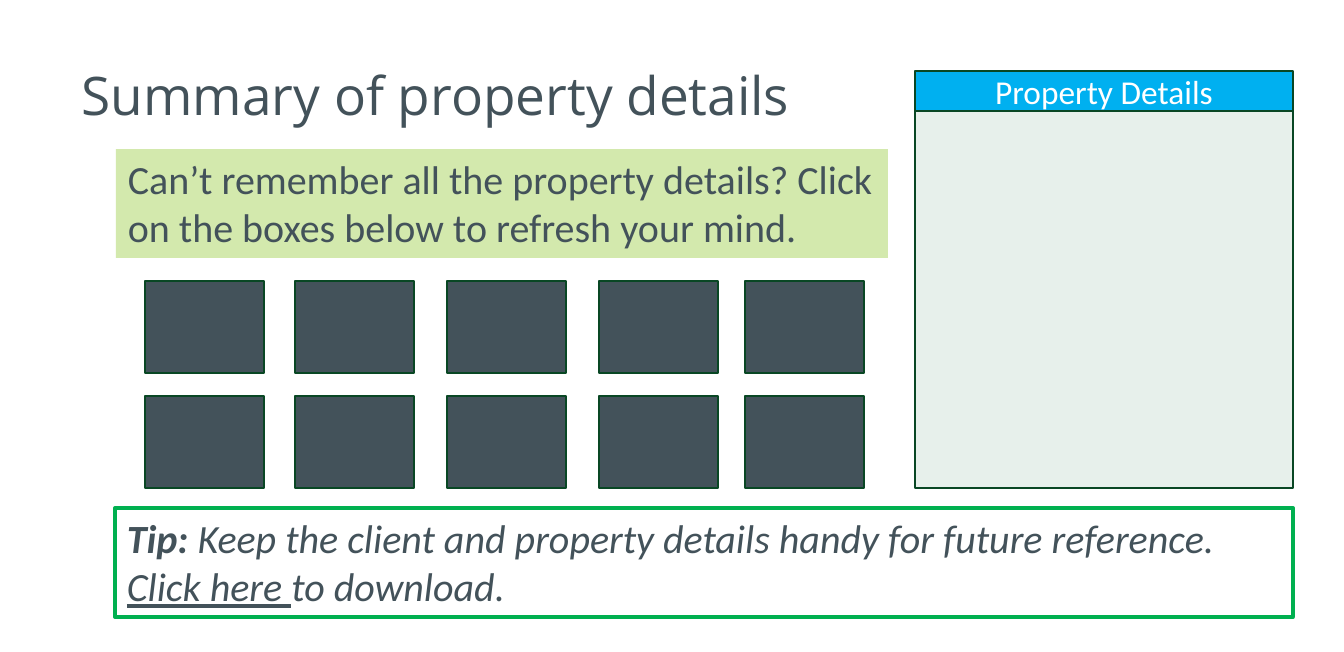
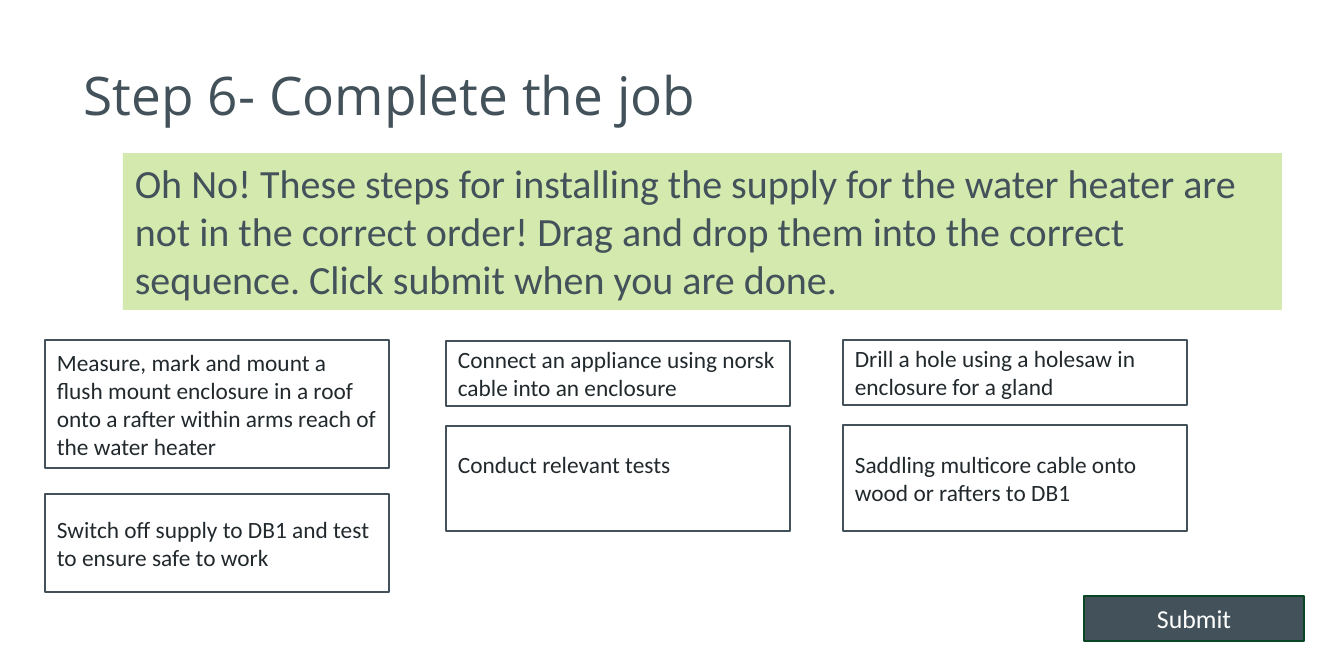
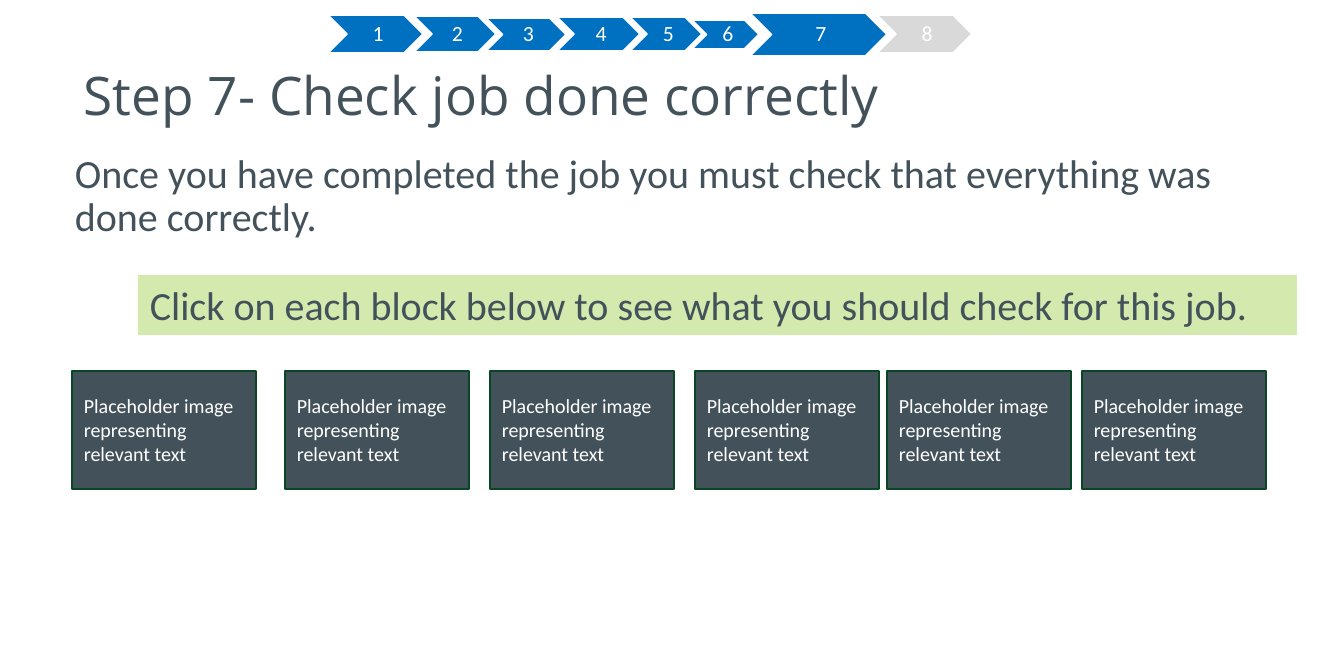
"""Build three training slides: property summary, step ordering and job check."""
from itertools import product

from pptx import Presentation
from pptx.dml.color import RGBColor
from pptx.enum.shapes import MSO_SHAPE as SHAPE
from pptx.enum.text import MSO_ANCHOR as ANCHOR, PP_ALIGN as ALIGN
from pptx.util import Pt

PX = 914400 // 120
PAGE_SIZE = (1344, 652)

SLATE, INK, WHITE = "43525A", "22292D", "FFFFFF"
FOREST, GREEN, LIME, MINT = "094724", "00B050", "D3E9AD", "E7F0EB"
SKY, BLUE, GREY = "00B0F0", "0070C0", "D9D9D9"

TITLE = {"text": SLATE, "font": "Open Sans", "size": 31.9, "spacing": 0.9, "anchor": ANCHOR.MIDDLE}
BODY = {"text": SLATE, "size": 24, "spacing": 0.9, "anchor": ANCHOR.TOP}
BANNER = {"fill": LIME, "text": SLATE, "size": 24, "anchor": ANCHOR.TOP}
TIP = {**BANNER, "fill": None, "line": GREEN, "weight": 2.25}
PANEL = {"fill": MINT, "line": FOREST}
PANEL_HEAD = {"fill": SKY, "line": FOREST, "size": 20, "align": ALIGN.CENTER}
TILE = {"fill": SLATE, "line": FOREST, "size": 12}
BUTTON = {**TILE, "size": 15.5, "align": ALIGN.CENTER}
CARD = {"fill": WHITE, "line": SLATE, "text": INK, "size": 14}
CHEVRON = {"shape": SHAPE.CHEVRON, "fill": BLUE, "line": WHITE, "size": 13, "spacing": 0.9,
           "align": ALIGN.CENTER, "insets": (7, 2, 2, 2)}

SUMMARY_TITLE = "Summary of property details"
SUMMARY_BANNER = "Can’t remember all the property details? Click on the boxes below to refresh your mind."
TIP_SPANS = [
    ("Tip: ", {"bold": True, "italic": True}),
    ("Keep the client and property details handy for future reference. ", {"italic": True}),
    ("Click here ", {"italic": True, "underline": True}),
    ("to download.", {"italic": True}),
]
SUMMARY_LEFTS = (145, 295, 447, 599, 745)
SUMMARY_TOPS = (281, 396)

ORDER_TITLE = "Step 6- Complete the job"
ORDER_BANNER = ("Oh No! These steps for installing the supply for the water heater are not in the "
                "correct order! Drag and drop them into the correct sequence. "
                "Click submit when you are done.")
CARD_WIDTH = 344
RAISED = {"insets": (12, 6, 12, 34)}
CARDS = [
    (45, 340, 128, "Measure, mark and mount a flush mount enclosure in a roof onto a rafter "
                   "within arms reach of the water heater", {}),
    (446, 341, 65, "Connect an appliance using norsk cable into an enclosure", {}),
    (843, 340, 65, "Drill a hole using a holesaw in enclosure for a gland", {}),
    (45, 494, 98, "Switch off supply to DB1 and test to ensure safe to work", {}),
    (446, 426, 105, "Conduct relevant tests", RAISED),
    (843, 425, 106, "Saddling multicore cable onto wood or rafters to DB1", {}),
]

CHECK_TITLE = "Step 7- Check job done correctly"
CHECK_BODY = "Once you have completed the job you must check that everything was done correctly."
CHECK_BANNER = "Click on each block below to see what you should check for this job."
CHECK_TILE = "Placeholder image representing relevant text"
CHECK_LEFTS = (72, 285, 490, 695, 887, 1082)
STEP_MIDDLE = 34
STEPS = [(328, 95, 38), (414, 82, 36), (486, 80, 33), (557, 83, 34),
         (630, 72, 34), (692, 67, 29), (750, 137, 43), (877, 95, 38)]
CURRENT_STEP = 7


def color(value):
    """Turn a hex string into a colour."""
    return RGBColor.from_string(value)


def paint(box, style):
    """Set fill and outline of a box."""
    if style.get("fill"):
        box.fill.solid()
        box.fill.fore_color.rgb = color(style["fill"])
    else:
        box.fill.background()
    if style.get("line"):
        box.line.color.rgb = color(style["line"])
        box.line.width = Pt(style.get("weight", 1))
    else:
        box.line.fill.background()


def write(box, spans, style):
    """Fill a box with one paragraph of formatted spans."""
    frame = box.text_frame
    left, top, right, bottom = (inset * PX for inset in style.get("insets", (12, 6, 12, 6)))
    layout = {"word_wrap": True, "vertical_anchor": style.get("anchor", ANCHOR.MIDDLE),
              "margin_left": left, "margin_top": top,
              "margin_right": right, "margin_bottom": bottom}
    for name, value in layout.items():
        setattr(frame, name, value)
    para = frame.paragraphs[0]
    para.alignment = style.get("align", ALIGN.LEFT)
    para.line_spacing = style.get("spacing", 1.0)
    for text, extras in spans:
        span = para.add_run()
        span.text = text
        span.font.color.rgb = color(style.get("text", WHITE))
        formats = {"name": style.get("font", "Calibri"), "size": Pt(style["size"]), **extras}
        for name, value in formats.items():
            setattr(span.font, name, value)


def add_box(page, place, style, content=""):
    """Add a shape with optional text, a string or a list of spans."""
    box = page.shapes.add_shape(style.get("shape", SHAPE.RECTANGLE), *(n * PX for n in place))
    box.shadow.inherit = False
    paint(box, style)
    if content:
        write(box, [(content, {})] if isinstance(content, str) else content, style)


def add_page(deck, title, left=72, width=1000):
    """Add a blank page with the shared title."""
    page = deck.slides.add_slide(deck.slide_layouts[6])
    box = page.shapes.add_textbox(*(n * PX for n in (left, 35, width, 126)))
    write(box, [(title, {})], TITLE)
    return page


def build_summary(deck):
    """Build the property summary page."""
    page = add_page(deck, SUMMARY_TITLE, 70, 830)
    add_box(page, (116, 149, 772, 109), BANNER, SUMMARY_BANNER)
    add_box(page, (115, 508, 1178, 109), TIP, TIP_SPANS)
    add_box(page, (915, 111, 378, 377), PANEL)
    add_box(page, (915, 71, 378, 40), PANEL_HEAD, "Property Details")
    for left, top in product(SUMMARY_LEFTS, SUMMARY_TOPS):
        add_box(page, (left, top, 119, 92), TILE)


def build_order(deck):
    """Build the step ordering page."""
    page = add_page(deck, ORDER_TITLE)
    add_box(page, (123, 153, 1159, 157), BANNER, ORDER_BANNER)
    for left, top, height, text, extras in CARDS:
        add_box(page, (left, top, CARD_WIDTH, height), {**CARD, **extras}, text)
    add_box(page, (1084, 596, 220, 45), BUTTON, "Submit")


def build_check(deck):
    """Build the job check page."""
    page = add_page(deck, CHECK_TITLE)
    body = page.shapes.add_textbox(*(n * PX for n in (63, 148, 1221, 108)))
    write(body, [(CHECK_BODY, {})], BODY)
    add_box(page, (138, 275, 1159, 60), BANNER, CHECK_BANNER)
    for left in CHECK_LEFTS:
        add_box(page, (left, 371, 184, 118), TILE, CHECK_TILE)
    for number, (left, width, height) in enumerate(STEPS, 1):
        fill = BLUE if number <= CURRENT_STEP else GREY
        place = (left, STEP_MIDDLE - height // 2, width, height)
        add_box(page, place, {**CHEVRON, "fill": fill}, str(number))


def main():
    """Build and save the deck."""
    deck = Presentation()
    deck.slide_width, deck.slide_height = (n * PX for n in PAGE_SIZE)
    for build in (build_summary, build_order, build_check):
        build(deck)
    deck.save("out.pptx")


if __name__ == "__main__":
    main()
